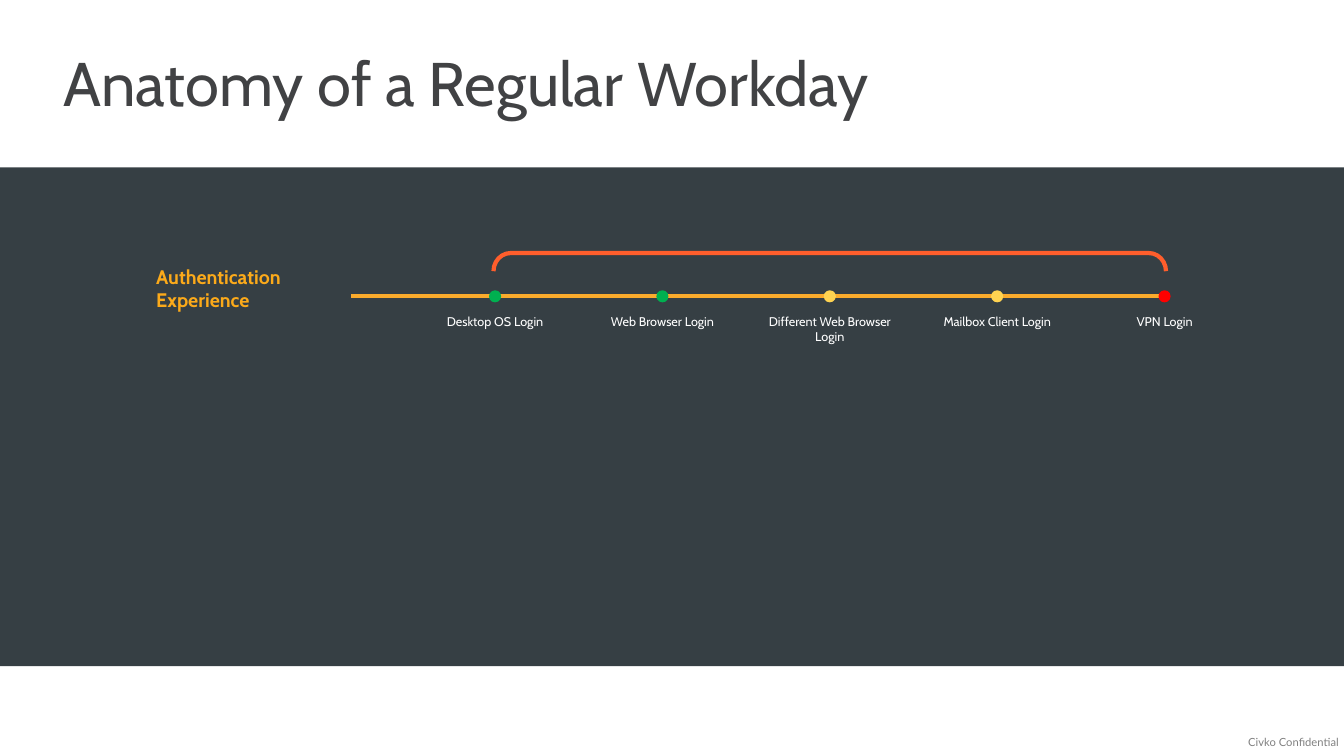
from dataclasses import dataclass

from lxml import etree
from pptx import Presentation
from pptx.dml.color import RGBColor
from pptx.enum.shapes import MSO_CONNECTOR as Conn, MSO_SHAPE as Shp
from pptx.enum.text import MSO_ANCHOR as Anchor, PP_ALIGN as Align
from pptx.oxml.ns import qn
from pptx.util import Inches, Pt

W, H = 13.33, 7.5
# Timeline grid: one column per login step
FIRST, COL = 4.91, 1.66
AXIS_Y, DOT = 2.94, 0.12
GREEN, YELLOW, RED, WHITE = "00B050", "FFD351", "FF0000", "FFFFFF"


@dataclass
class Step:
    label: str
    color: str
    width: float


STEPS = [
    Step("Desktop OS Login", GREEN, 1.76),
    Step("Web Browser Login", GREEN, 1.53),
    Step("Different Web Browser Login", YELLOW, 1.53),
    Step("Mailbox Client Login", YELLOW, 1.59),
    Step("VPN Login", RED, 1.59),
]


def rgb(color: str) -> RGBColor:
    return RGBColor.from_string(color)


def col_x(i: float) -> float:
    """Centre of timeline column i, in inches."""
    return FIRST + i * COL


def box(x: float, y: float, w: float, h: float) -> tuple:
    return Inches(x), Inches(y), Inches(w), Inches(h)


def style(p, size: float, color: str, font: str = "Cabin", bold: bool = False) -> None:
    p.font.size, p.font.name, p.font.bold = Pt(size), font, bold
    p.font.color.rgb = rgb(color)


def add_shape(slide, kind, rect: tuple, fill: str):
    sp = slide.shapes.add_shape(kind, *rect)
    sp.shadow.inherit = False
    sp.fill.solid()
    sp.fill.fore_color.rgb = rgb(fill)
    sp.line.fill.background()
    return sp


def add_text(slide, text: str, rect: tuple, size: float, color: str,
             align=Align.LEFT, font: str = "Cabin", bold: bool = False):
    tf = slide.shapes.add_textbox(*rect).text_frame
    tf.word_wrap = True
    p = tf.paragraphs[0]
    p.text, p.alignment = text, align
    style(p, size, color, font, bold)
    return tf


def set_insets(tf, left: float = 0) -> None:
    tf.margin_left = Inches(left)
    tf.margin_top = tf.margin_right = tf.margin_bottom = 0


def add_step(slide, i: int, step: Step) -> None:
    x = col_x(i)
    add_shape(slide, Shp.OVAL, box(x - DOT / 2, AXIS_Y - DOT / 2, DOT, DOT), step.color)
    add_text(slide, step.label, box(x - step.width / 2, 3.06, step.width, 0.41),
             9, WHITE, Align.CENTER)


def add_bracket(slide) -> None:
    """Right bracket turned upwards to span the first to the last step."""
    depth, span = 0.18, 4 * COL + 0.03
    mid_x, mid_y = col_x(2), 2.6
    sp = slide.shapes.add_shape(
        Shp.RIGHT_BRACKET, *box(mid_x - depth / 2, mid_y - span / 2, depth, span))
    sp.rotation = 270
    sp.adjustments[0] = 0.948
    sp.shadow.inherit = False
    sp.fill.background()
    sp.line.color.rgb, sp.line.width = rgb("FF5E2C"), Pt(3)


def add_axis(slide) -> None:
    y = Inches(AXIS_Y)
    cx = slide.shapes.add_connector(Conn.STRAIGHT, Inches(3.48), y, Inches(col_x(4) + 0.02), y)
    cx.line.color.rgb, cx.line.width = rgb("FBAB2C"), Pt(3)
    etree.SubElement(cx._element.spPr, qn("a:effectLst"))


def main() -> None:
    prs = Presentation()
    prs.slide_width, prs.slide_height = Inches(W), Inches(H)
    slide = prs.slides.add_slide(prs.slide_layouts[5])

    # Dark band
    add_shape(slide, Shp.RECTANGLE, box(0, 1.66, W, 0.66 * H), "363F44")

    # Title
    title = slide.shapes.title
    title.left, title.top, title.width, title.height = box(0.53, 0.48, 11.88, 1.36)
    tf = title.text_frame
    tf.text, tf.vertical_anchor = "Anatomy of a Regular Workday", Anchor.TOP
    p = tf.paragraphs[0]
    p.alignment, p.line_spacing = Align.LEFT, 0.9
    style(p, 44, "414244")

    # Timeline
    add_bracket(slide)
    add_axis(slide)
    for i, step in enumerate(STEPS):
        add_step(slide, i, step)

    # Row heading
    tf = add_text(slide, "Authentication Experience", box(1.5, 2.7, 2.1, 0.39),
                  14, "FCAA1A", bold=True)
    set_insets(tf, left=0.05)
    tf.vertical_anchor = Anchor.BOTTOM
    tf.paragraphs[0].line_spacing = 0.95

    # Footer
    tf = add_text(slide, "Civko Confidential", box(12.38, 7.3, 0.91, 0.13),
                  8, "808080", font="Lato")
    set_insets(tf)
    tf.word_wrap = False

    prs.save("out.pptx")


if __name__ == "__main__":
    main()
